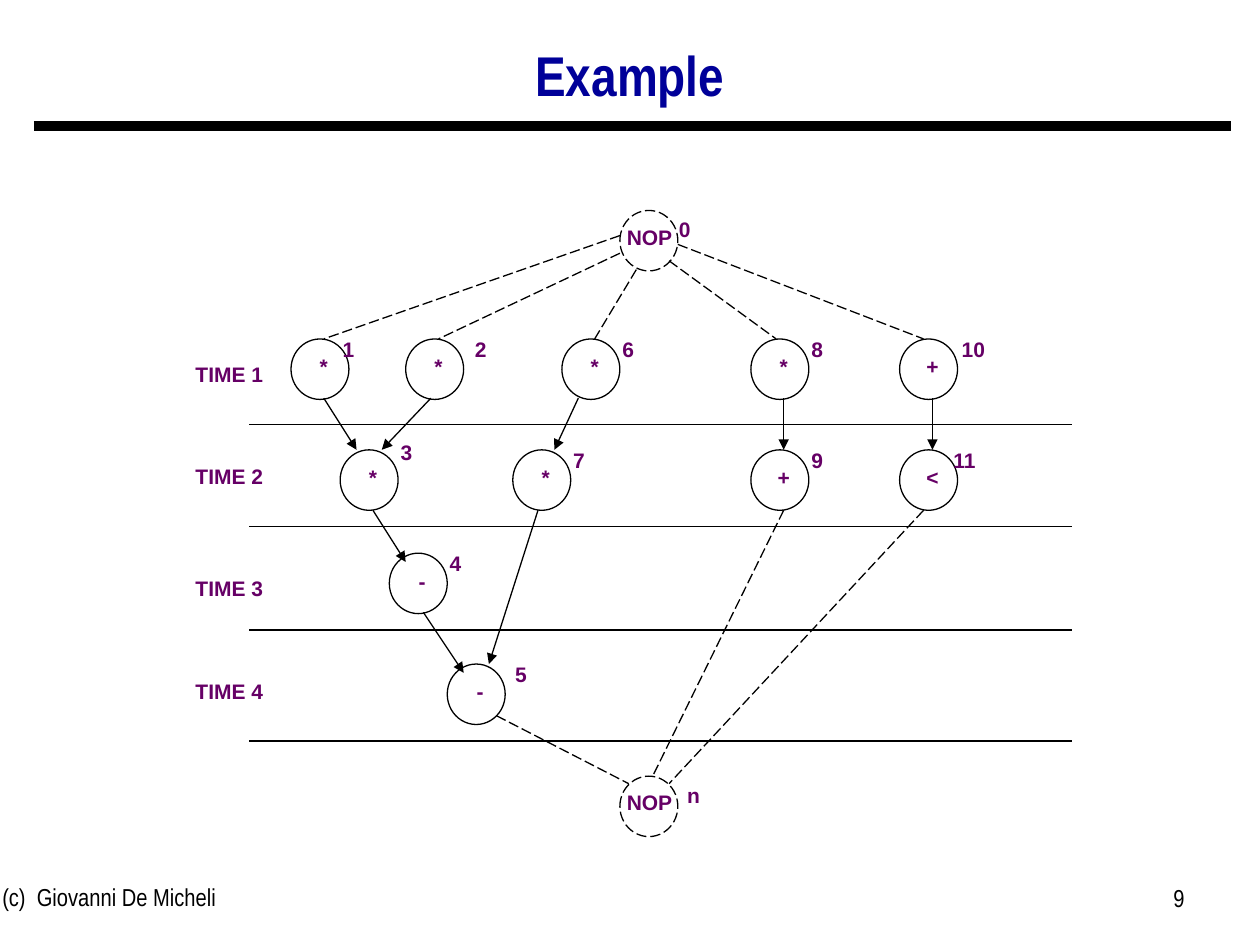
from lxml import etree
from pptx import Presentation
from pptx.dml.color import RGBColor
from pptx.enum.dml import MSO_LINE
from pptx.enum.shapes import MSO_CONNECTOR, MSO_SHAPE
from pptx.enum.text import MSO_ANCHOR, PP_ALIGN
from pptx.oxml.ns import qn
from pptx.util import Inches, Pt

BLACK = RGBColor(0x00, 0x00, 0x00)
NAVY = RGBColor(0x00, 0x00, 0x99)
PURPLE = RGBColor(0x66, 0x00, 0x66)

LABEL = {"name": "Arial", "size": Pt(12), "bold": True}
FOOTER = {"name": "Arial Narrow", "size": Pt(14)}
TITLE = {"name": "Arial Narrow", "size": Pt(32), "bold": True}

NODE_W, NODE_H = 0.46, 0.48
TEXT_H = 0.3

prs = Presentation()
prs.slide_width, prs.slide_height = Inches(10), Inches(7.5)
s = prs.slides.add_slide(prs.slide_layouts[6])


def add_text(text, x, y, w, h=TEXT_H, font=LABEL, color=PURPLE, align=PP_ALIGN.CENTER):
    tf = s.shapes.add_textbox(Inches(x), Inches(y), Inches(w), Inches(h)).text_frame
    tf.word_wrap = True
    p = tf.paragraphs[0]
    p.alignment = align
    r = p.add_run()
    r.text = text
    for key, value in font.items():
        setattr(r.font, key, value)
    r.font.color.rgb = color
    return tf


def add_line(x1, y1, x2, y2, width=0.75, dashed=False, arrow=False):
    line = s.shapes.add_connector(
        MSO_CONNECTOR.STRAIGHT, Inches(x1), Inches(y1), Inches(x2), Inches(y2))
    line.line.color.rgb = BLACK
    line.line.width = Pt(width)
    if dashed:
        line.line.dash_style = MSO_LINE.LONG_DASH
    if arrow:
        etree.SubElement(line.line._get_or_add_ln(), qn("a:tailEnd"), type="triangle")
    etree.SubElement(line._element.spPr, qn("a:effectLst"))


# Title, rule and footer
add_line(0.27, 1, 9.77, 1, width=6)
add_text("(c)  Giovanni De Micheli", -0.08, 6.95, 3.17, 0.52, FOOTER, BLACK, PP_ALIGN.LEFT)
add_text("9", 7.17, 6.96, 2.33, 0.52, FOOTER, BLACK, PP_ALIGN.RIGHT)
tf = add_text("Example", 0.75, 0, 8.5, 1.25, TITLE, NAVY)
tf.vertical_anchor = MSO_ANCHOR.MIDDLE
tf.paragraphs[0].line_spacing = 0.9

# Time steps: label top, lower boundary
for step, (label_y, line_y) in enumerate(
        [(2.82, 3.37), (3.63, 4.18), (4.52, 5), (5.34, 5.88)], start=1):
    add_text(f"TIME {step}", 1.33, label_y, 0.98)
    add_line(1.98, line_y, 8.51, line_y)

# Operations: symbol, left, top, number, number's left and top
operations = [
    ("NOP", 4.92, 1.67, "0", 5.11, 1.67),
    ("*", 2.31, 2.69, "1", 2.44, 2.62),
    ("*", 3.22, 2.69, "2", 3.49, 2.62),
    ("*", 4.46, 2.69, "6", 4.66, 2.62),
    ("*", 5.96, 2.69, "8", 6.16, 2.62),
    ("+", 7.14, 2.69, "10", 7.4, 2.62),
    ("*", 2.7, 3.57, "3", 2.9, 3.44),
    ("*", 4.07, 3.57, "7", 4.27, 3.5),
    ("+", 5.96, 3.57, "9", 6.16, 3.5),
    ("<", 7.14, 3.57, "11", 7.33, 3.5),
    ("-", 3.09, 4.39, "4", 3.29, 4.32),
    ("-", 3.55, 5.27, "5", 3.81, 5.2),
    ("NOP", 4.92, 6.16, "n", 5.18, 6.16),
]
for symbol, x, y, number, number_x, number_y in operations:
    sp = s.shapes.add_shape(
        MSO_SHAPE.OVAL, Inches(x), Inches(y), Inches(NODE_W), Inches(NODE_H))
    sp.shadow.inherit = False
    sp.fill.background()
    sp.line.color.rgb = BLACK
    sp.line.width = Pt(0.75)
    if symbol == "NOP":
        sp.line.dash_style = MSO_LINE.LONG_DASH
        add_text(symbol, x - 0.19, y + 0.06, 0.85)
    else:
        add_text(symbol, x, y + 0.07, 0.52)
    add_text(number, number_x, number_y, 0.65)

# Dashed edges leave the source NOP or enter the sink NOP
nop_edges = [
    (4.92, 1.87, 2.57, 2.69),
    (4.92, 2.01, 3.48, 2.69),
    (5.05, 2.14, 4.72, 2.69),
    (5.31, 2.07, 6.16, 2.69),
    (5.38, 1.94, 7.33, 2.69),
    (3.94, 5.68, 4.99, 6.22),
    (6.22, 4.05, 5.18, 6.16),
    (7.33, 4.05, 5.31, 6.22),
]
data_edges = [
    (2.57, 3.16, 2.83, 3.57),
    (3.42, 3.16, 3.03, 3.57),
    (4.59, 3.16, 4.4, 3.57),
    (6.22, 3.16, 6.22, 3.57),
    (7.4, 3.16, 7.4, 3.57),
    (2.96, 4.05, 3.22, 4.46),
    (3.36, 4.86, 3.68, 5.34),
    (4.27, 4.05, 3.88, 5.27),
]
for edge in nop_edges:
    add_line(*edge, dashed=True)
for edge in data_edges:
    add_line(*edge, arrow=True)

prs.save("out.pptx")
